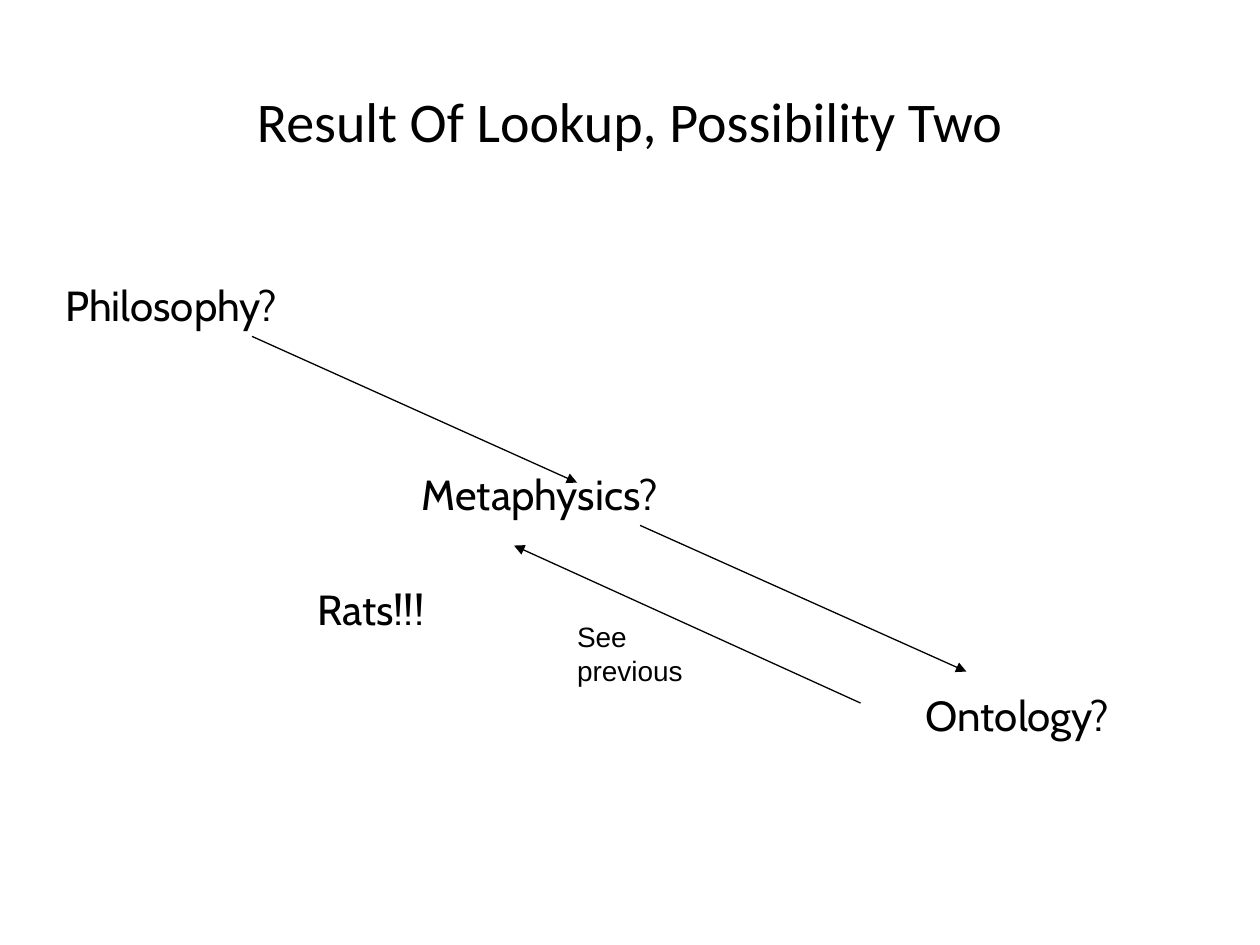
"""Build the slide on the second possible result of a lookup."""
import pptx
import pptx.dml.color
import pptx.enum.shapes
import pptx.enum.text
import pptx.oxml
import pptx.oxml.ns
import pptx.util
from pptx.util import Inches


def color(value):
    return pptx.dml.color.RGBColor.from_string(value)


deck = pptx.Presentation()
deck.slide_width = Inches(10)
deck.slide_height = Inches(7.5)
page = deck.slides.add_slide(deck.slide_layouts[6])

left, center = pptx.enum.text.PP_ALIGN.LEFT, pptx.enum.text.PP_ALIGN.CENTER
top, middle = pptx.enum.text.MSO_ANCHOR.TOP, pptx.enum.text.MSO_ANCHOR.MIDDLE

labels = [
    ("Result Of Lookup, Possibility Two", 0.75, 0.15, 8.5, 1.61, "Calibri", 32, center, middle, True, 0.1),
    ("Philosophy?", 0.42, 2.17, 2.42, 0.5, "Cabin", 24, left, top, True, 0.1),
    ("Metaphysics?", 3.25, 3.67, 2.5, 0.5, "Cabin", 24, left, top, True, 0.1),
    ("Ontology?", 7.25, 5.42, 1.68, 0.5, "Cabin", 24, left, top, False, 0.1),
    ("Rats!!!", 2.42, 4.58, 1.42, 0.5, "Cabin", 24, left, top, True, 0.1),
    ("See previous", 4.58, 4.92, 1.17, 0.53, "Arial", 16, left, top, True, 0),
]
for text, x, y, width, height, font, size, align, anchor, wrap, inset in labels:
    box = page.shapes.add_textbox(Inches(x), Inches(y), Inches(width), Inches(height))
    frame = box.text_frame
    frame.word_wrap = wrap
    frame.vertical_anchor = anchor
    frame.margin_left = frame.margin_right = Inches(inset)
    frame.margin_top = frame.margin_bottom = Inches(inset / 2)
    para = frame.paragraphs[0]
    para.alignment = align
    span = para.add_run()
    span.text = text
    span.font.name = font
    span.font.size = pptx.util.Pt(size)
    span.font.color.rgb = color("000000")

arrows = [
    (2, 2.67, 4.58, 3.83),
    (5.08, 4.17, 7.67, 5.33),
    (6.83, 5.58, 4.08, 4.33),
]
for ends in arrows:
    arrow = page.shapes.add_connector(
        pptx.enum.shapes.MSO_CONNECTOR.STRAIGHT, *[Inches(value) for value in ends]
    )
    arrow.line.color.rgb = color("000000")
    arrow.line.width = pptx.util.Pt(0.75)
    properties = arrow.element.spPr
    head = pptx.oxml.parse_xml(f'<a:tailEnd {pptx.oxml.ns.nsdecls("a")} type="triangle"/>')
    properties.find(pptx.oxml.ns.qn("a:ln")).append(head)
    properties.append(pptx.oxml.parse_xml(f'<a:effectLst {pptx.oxml.ns.nsdecls("a")}/>'))

deck.save("out.pptx")
